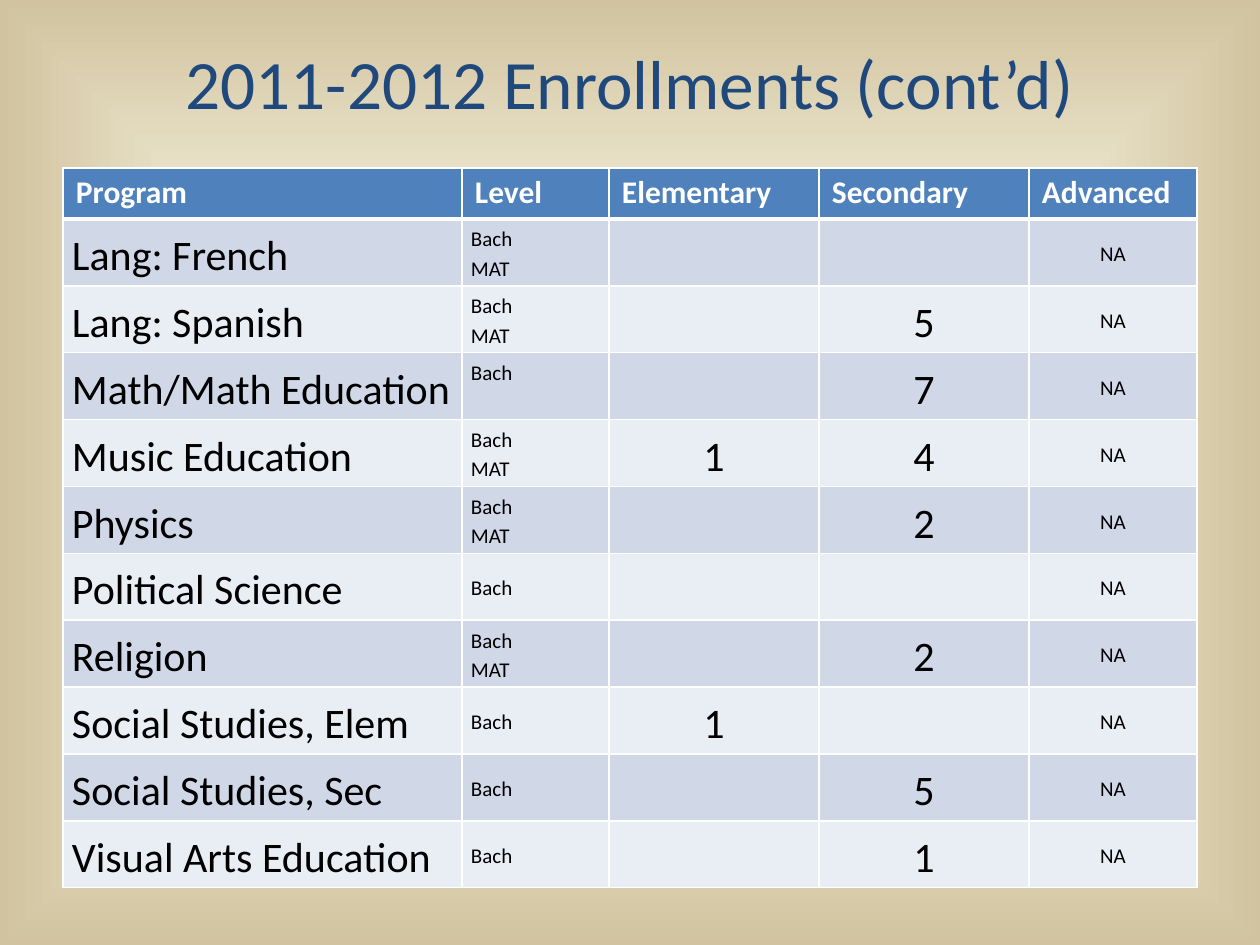
"""Build the 2011-2012 enrollments table slide."""
from lxml import etree
from pptx import Presentation, util as u
from pptx.dml.color import RGBColor
from pptx.enum import text
from pptx.oxml import parse_xml
from pptx.oxml.ns import nsdecls, qn

PX = u.Inches(1) / 126
FONT = "Calibri"
NAVY = RGBColor(0x1F, 0x49, 0x7D)
BLUE = RGBColor(0x4F, 0x81, 0xBD)
WHITE = RGBColor(0xFF, 0xFF, 0xFF)
BLACK = RGBColor(0x00, 0x00, 0x00)
BANDS = [RGBColor(0xD0, 0xD8, 0xE8), RGBColor(0xE9, 0xED, 0xF4)]
BACKGROUND_STOPS = [
    (0, RGBColor(0xFF, 0xEF, 0xD1)),
    (52, RGBColor(0xF0, 0xEB, 0xD5)),
    (100, RGBColor(0xD1, 0xC3, 0x9F)),
]

HEADERS = ["Program", "Level", "Elementary", "Secondary", "Advanced"]
PROGRAMS = [
    ("Lang: French", "Bach\nMAT", "", "", "NA"),
    ("Lang: Spanish", "Bach\nMAT", "", "5", "NA"),
    ("Math/Math Education", "Bach", "", "7", "NA"),
    ("Music Education", "Bach\nMAT", "1", "4", "NA"),
    ("Physics", "Bach\nMAT", "", "2", "NA"),
    ("Political Science", "Bach", "", "", "NA"),
    ("Religion", "Bach\nMAT", "", "2", "NA"),
    ("Social Studies, Elem", "Bach", "1", "", "NA"),
    ("Social Studies, Sec", "Bach", "", "5", "NA"),
    ("Visual Arts Education", "Bach", "", "1", "NA"),
]
COLUMN_WIDTHS = [399, 147, 210, 210, 168]
COLUMN_SIZES = [24, 12, 24, 24, 12]
HEADER_HEIGHT, ROW_HEIGHT = 51, 66


def px(length):
    return u.Emu(round(length * PX))


def fill_cell(cell, words, color, margins, borders):
    cell.text = words
    cell.margin_left = cell.margin_right = px(margins[0])
    cell.margin_top = cell.margin_bottom = px(margins[1])
    properties = cell._tc.get_or_add_tcPr()
    for side, points in zip(("lnL", "lnR", "lnT", "lnB"), borders):
        line = etree.SubElement(properties, qn(f"a:{side}"), w=str(u.Pt(points)))
        solid = etree.SubElement(line, qn("a:solidFill"))
        etree.SubElement(solid, qn("a:srgbClr"), val=str(WHITE))
    cell.fill.solid()
    cell.fill.fore_color.rgb = color


presentation = Presentation()
presentation.slide_width, presentation.slide_height = px(1260), px(945)
slide = presentation.slides.add_slide(presentation.slide_layouts[5])

slide.background.fill.gradient()
gradient = slide.background._cSld.find(".//" + qn("a:gradFill"))
stops = "".join(
    f'<a:gs pos="{position * 1000}"><a:srgbClr val="{color}"/></a:gs>'
    for position, color in BACKGROUND_STOPS
)
gradient.getparent().replace(gradient, parse_xml(
    f'<a:gradFill {nsdecls("a")} rotWithShape="1"><a:gsLst>{stops}</a:gsLst>'
    '<a:path path="shape"><a:fillToRect l="50000" t="50000" r="50000" b="50000"/>'
    "</a:path></a:gradFill>"
))

title = slide.shapes.title
title.left, title.top, title.width, title.height = px(63), px(38), px(1134), px(88)
title.text_frame.text = "2011-2012 Enrollments (cont’d)"
title.text_frame.vertical_anchor = text.MSO_ANCHOR.MIDDLE
paragraph = title.text_frame.paragraphs[0]
paragraph.alignment = text.PP_ALIGN.CENTER
paragraph.font.name = FONT
paragraph.font.size = u.Pt(39.6)
paragraph.font.color.rgb = NAVY

table = slide.shapes.add_table(
    len(PROGRAMS) + 1, len(HEADERS), px(63), px(168), px(sum(COLUMN_WIDTHS)),
    px(HEADER_HEIGHT + ROW_HEIGHT * len(PROGRAMS)),
).table
for column, width in zip(table.columns, COLUMN_WIDTHS):
    column.width = px(width)

table.rows[0].height = px(HEADER_HEIGHT)
for cell, words in zip(table.rows[0].cells, HEADERS):
    fill_cell(cell, words, BLUE, (13, 6), (1, 1, 1, 3))
    font = cell.text_frame.paragraphs[0].font
    font.name, font.size, font.bold = FONT, u.Pt(18), True
    font.color.rgb = WHITE

for number, program in enumerate(PROGRAMS):
    row = table.rows[number + 1]
    row.height = px(ROW_HEIGHT)
    top_border = 3 if number == 0 else 1
    for index, (cell, words) in enumerate(zip(row.cells, program)):
        fill_cell(cell, words, BANDS[number % 2], (9, 4), (1, 1, top_border, 1))
        cell.vertical_anchor = text.MSO_ANCHOR.MIDDLE
        for paragraph in cell.text_frame.paragraphs:
            paragraph.line_spacing = 1.15
            paragraph.alignment = text.PP_ALIGN.CENTER if index > 1 else text.PP_ALIGN.LEFT
            paragraph.font.name = FONT
            paragraph.font.size = u.Pt(COLUMN_SIZES[index])
            paragraph.font.color.rgb = BLACK

math_level = table.cell(3, 1)
math_level.vertical_anchor = text.MSO_ANCHOR.TOP

presentation.save("out.pptx")
